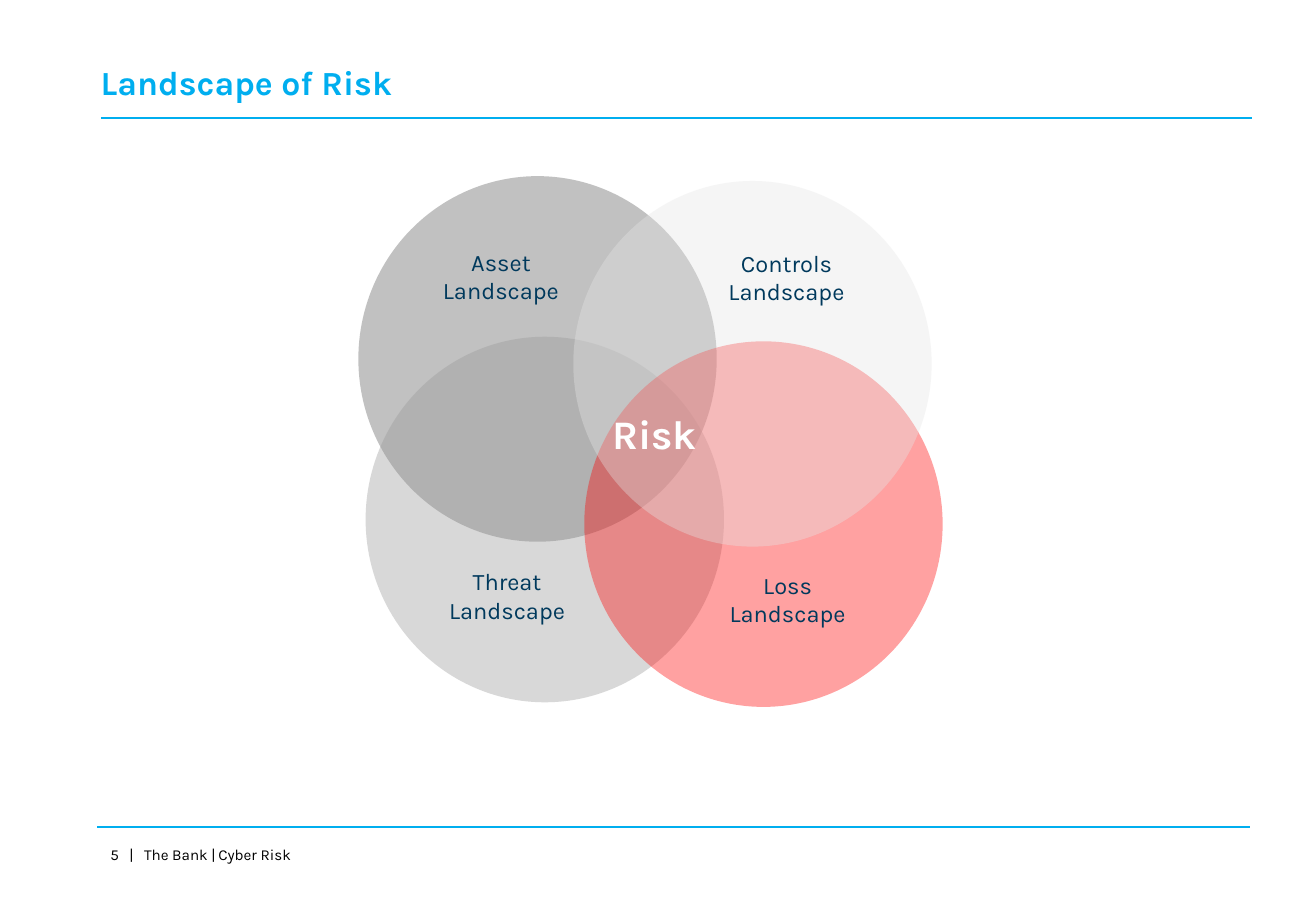
"""Build the Landscape of Risk slide with four overlapping circles."""
import pptx
import pptx.dml.color
import pptx.enum.shapes
import pptx.enum.text
import pptx.oxml.ns
import pptx.util
from lxml import etree

Pt = pptx.util.Pt
qn = pptx.oxml.ns.qn
ALIGN = pptx.enum.text.PP_ALIGN
COLORS = {
    "accent": "00AEEF",
    "label": "00395C",
    "risk": "FFFFFF",
    "footer": "000000",
    "asset": "595959",
    "threat": "969696",
    "loss": "FF0000",
    "controls": "E5E5E5",
}


def rgb(name):
    return pptx.dml.color.RGBColor.from_string(COLORS[name])


def add_text(text, box, size, color, bold=False, align=ALIGN.LEFT, insets=(0, 0), tabs=()):
    shape = slide.shapes.add_textbox(*map(Pt, box))
    frame = shape.text_frame
    frame.word_wrap = True
    frame.margin_left = frame.margin_right = Pt(insets[0])
    frame.margin_top = frame.margin_bottom = Pt(insets[1])
    frame.text = text
    for paragraph in frame.paragraphs:
        paragraph.alignment = align
        if tabs:
            tab_list = etree.SubElement(paragraph._p.get_or_add_pPr(), qn("a:tabLst"))
            for position in tabs:
                etree.SubElement(tab_list, qn("a:tab"), pos=str(Pt(position)), algn="l")
        for run in paragraph.runs:
            run.font.name = "Karla"
            run.font.size = Pt(size)
            run.font.bold = bold
            run.font.color.rgb = rgb(color)
    return frame


presentation = pptx.Presentation()
presentation.slide_width = Pt(780)
presentation.slide_height = Pt(540)
slide = presentation.slides.add_slide(presentation.slide_layouts[6])

title = add_text("Landscape of Risk", (59.6, 36.4, 687.6, 24.5), 20, "accent", bold=True)
title.vertical_anchor = pptx.enum.text.MSO_ANCHOR.MIDDLE

for left, right, top in [(57.6, 740.9, 490.3), (59.8, 742.3, 70)]:
    rule = slide.shapes.add_connector(
        pptx.enum.shapes.MSO_CONNECTOR.STRAIGHT, Pt(left), Pt(top), Pt(right), Pt(top))
    rule.line.color.rgb = rgb("accent")
    rule.line.width = Pt(1)
    etree.SubElement(rule._element.spPr, qn("a:effectLst"))

for name, left, top in [
    ("asset", 212.4, 104.4),
    ("threat", 216.7, 199.6),
    ("loss", 346.3, 202.3),
    ("controls", 339.8, 107.3),
]:
    circle = slide.shapes.add_shape(
        pptx.enum.shapes.MSO_SHAPE.OVAL, Pt(left), Pt(top), Pt(212.4), Pt(216.7))
    circle.shadow.inherit = False
    circle.line.fill.background()
    circle.fill.solid()
    circle.fill.fore_color.rgb = rgb(name)
    fill_color = circle._element.spPr.find(qn("a:solidFill"))[0]
    etree.SubElement(fill_color, qn("a:alpha"), val="37000")

add_text("Risk", (362.9, 242.6, 213.8, 28.8), 24, "risk", bold=True)

for word, left, top, width in [
    ("Controls", 334.8, 147.6, 262.8),
    ("Loss", 360, 338.4, 213.8),
    ("Asset", 190.1, 146.9, 213.8),
    ("Threat", 193.7, 336.2, 213.8),
]:
    add_text(f"{word}\nLandscape", (left, top, width, 33.8), 14, "label", align=ALIGN.CENTER)

add_text("5\t|\tThe Bank |\tCyber Risk", (58.3, 497.5, 491, 18), 9, "footer",
         insets=(7.2, 3.6), tabs=(11.3, 20, 64))

presentation.save("out.pptx")
